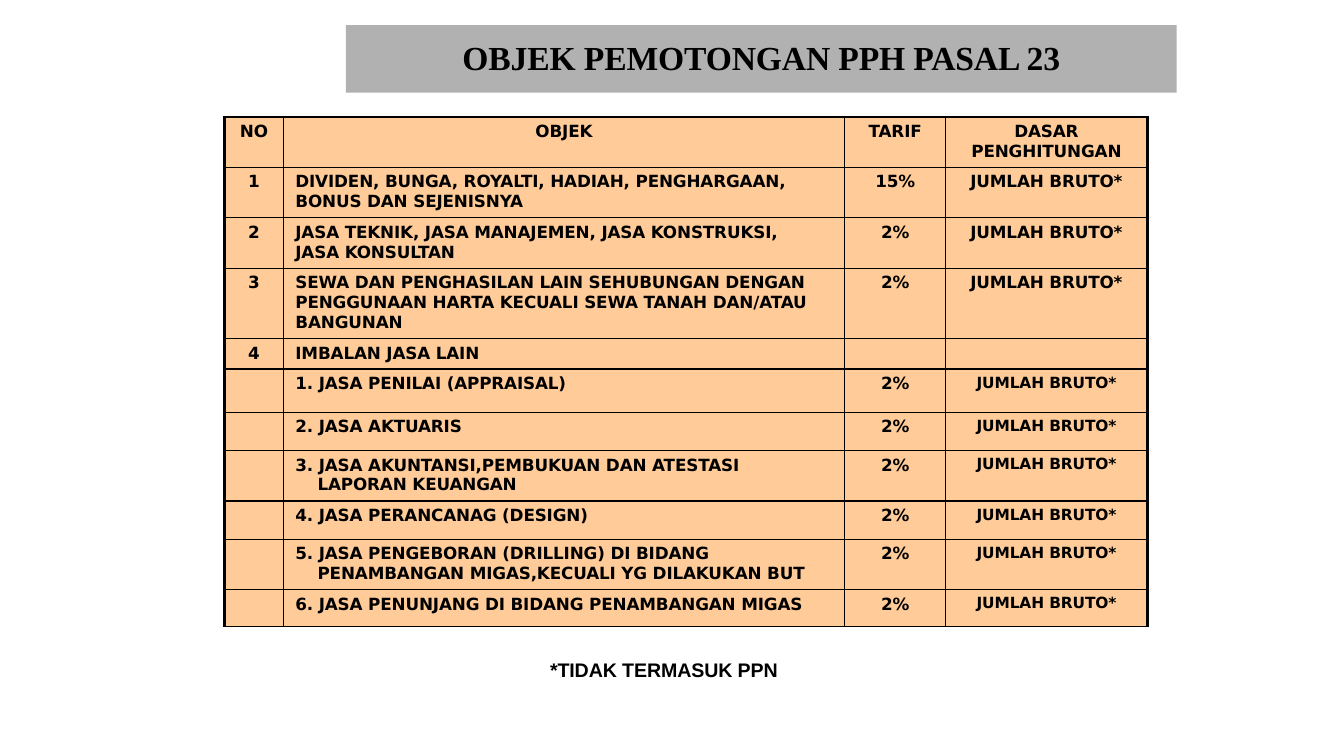
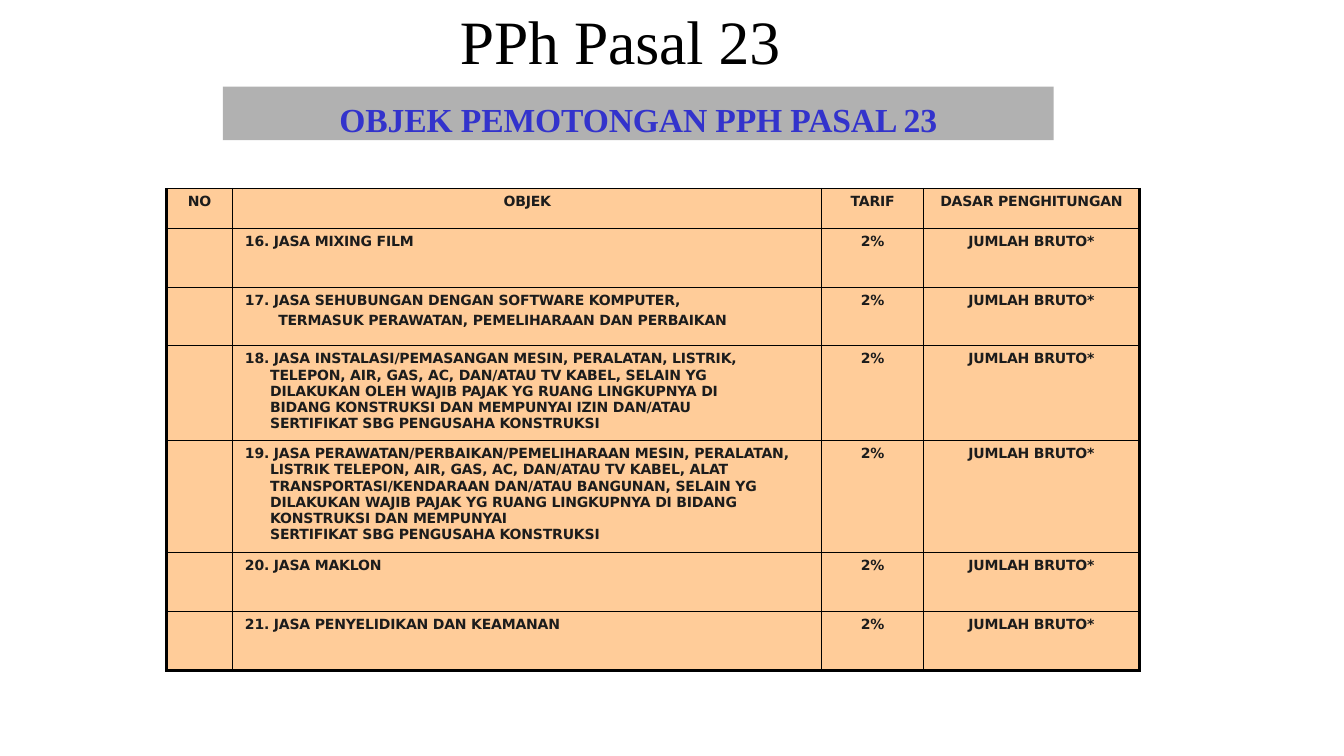
from lxml.etree import SubElement
from pptx import Presentation
from pptx.dml.color import RGBColor
from pptx.enum.shapes import MSO_SHAPE
from pptx.enum.text import MSO_ANCHOR, MSO_AUTO_SIZE, PP_ALIGN
from pptx.oxml.ns import qn
from pptx.util import Inches, Pt

BLACK = RGBColor(0x00, 0x00, 0x00)
INK = RGBColor(0x1C, 0x1C, 0x1C)
BLUE = RGBColor(0x33, 0x33, 0xCC)
GREY = RGBColor(0xB1, 0xB1, 0xB1)
PEACH = RGBColor(0xFF, 0xCC, 0x99)

SERIF, SANS, TABLE_FONT = "Times New Roman", "Arial", "DejaVu Sans"
HEADING = "OBJEK PEMOTONGAN PPH PASAL 23"
BASIS = "JUMLAH BRUTO*"
BAND_WIDTH = 8.24
THICK, THIN = 2.25, 1
CELL_INDENT, CELL_TOP = 0.12, 0.05

# Each row: number, object, rate, height; line spacing where it is not single
GENERAL = {
    "at": (2.23, 1.16),
    "columns": (0.58, 5.57, 1, 2),
    "header": ("NO", "OBJEK", "TARIF", "DASAR\nPENGHITUNGAN"),
    "header_height": 0.5,
    "rows": [
        ("1", "DIVIDEN, BUNGA, ROYALTI, HADIAH, PENGHARGAAN,\nBONUS DAN SEJENISNYA", "15%", 0.5),
        ("2", "JASA TEKNIK, JASA MANAJEMEN, JASA KONSTRUKSI,\nJASA KONSULTAN", "2%", 0.5),
        ("3", "SEWA DAN PENGHASILAN LAIN SEHUBUNGAN DENGAN\n"
              "PENGGUNAAN HARTA KECUALI SEWA TANAH DAN/ATAU\nBANGUNAN", "2%", 0.7),
        ("4", "IMBALAN JASA LAIN", "", 0.3),
        ("", "1. JASA PENILAI (APPRAISAL)", "2%", 0.43),
        ("", "2. JASA AKTUARIS", "2%", 0.38),
        ("", "3. JASA AKUNTANSI,PEMBUKUAN DAN ATESTASI\nLAPORAN KEUANGAN", "2%", 0.5),
        ("", "4. JASA PERANCANAG (DESIGN)", "2%", 0.38),
        ("", "5. JASA PENGEBORAN (DRILLING) DI BIDANG\n"
             "PENAMBANGAN MIGAS,KECUALI YG DILAKUKAN BUT", "2%", 0.5),
        ("", "6. JASA PENUNJANG DI BIDANG PENAMBANGAN MIGAS", "2%", 0.37),
    ],
    "size": 12, "item_basis_size": 11, "color": BLACK, "hang": 0.22,
    "outer": {"L": THICK, "R": THICK, "T": THICK, "B": THIN},
}
SERVICES = {
    "at": (1.65, 1.87),
    "columns": (0.66, 5.84, 1.01, 2.14),
    "header": ("NO", "OBJEK", "TARIF", "DASAR PENGHITUNGAN"),
    "header_height": 0.4,
    "rows": [
        ("", "16. JASA MIXING FILM", "2%", 0.58),
        ("", "17. JASA SEHUBUNGAN DENGAN SOFTWARE KOMPUTER,\n"
             "TERMASUK PERAWATAN, PEMELIHARAAN DAN PERBAIKAN", "2%", 0.58, 1.2),
        ("", "18. JASA INSTALASI/PEMASANGAN MESIN, PERALATAN, LISTRIK,\n"
             "TELEPON, AIR, GAS, AC, DAN/ATAU TV KABEL, SELAIN YG\n"
             "DILAKUKAN OLEH WAJIB PAJAK YG RUANG LINGKUPNYA DI\n"
             "BIDANG KONSTRUKSI DAN MEMPUNYAI IZIN DAN/ATAU\n"
             "SERTIFIKAT SBG PENGUSAHA KONSTRUKSI", "2%", 0.94),
        ("", "19. JASA PERAWATAN/PERBAIKAN/PEMELIHARAAN MESIN, PERALATAN,\n"
             "LISTRIK TELEPON, AIR, GAS, AC, DAN/ATAU TV KABEL, ALAT\n"
             "TRANSPORTASI/KENDARAAN DAN/ATAU BANGUNAN, SELAIN YG\n"
             "DILAKUKAN WAJIB PAJAK YG RUANG LINGKUPNYA DI BIDANG\n"
             "KONSTRUKSI DAN MEMPUNYAI\n"
             "SERTIFIKAT SBG PENGUSAHA KONSTRUKSI", "2%", 1.11),
        ("", "20. JASA MAKLON", "2%", 0.59),
        ("", "21. JASA PENYELIDIKAN DAN KEAMANAN", "2%", 0.58),
    ],
    "size": 10, "item_basis_size": 10, "color": INK, "hang": 0.25,
    "outer": {"L": THICK, "R": THICK, "T": THIN, "B": THICK},
}


def write(p, text, font, size, color, bold=True, align=PP_ALIGN.CENTER):
    p.text = text
    p.alignment = align
    for r in p.runs:
        r.font.name, r.font.size, r.font.bold = font, Pt(size), bold
        r.font.color.rgb = color
        r._r.get_or_add_rPr().set("spc", "-10")
    if not text:
        SubElement(p._p, qn("a:endParaRPr"), sz=str(size * 100))


def write_box(sp, top, *args, **kwargs):
    """Write one line in a shape, `top` inches below its upper edge."""
    tf = sp.text_frame
    tf.word_wrap = False
    tf.auto_size = MSO_AUTO_SIZE.NONE
    tf.vertical_anchor = MSO_ANCHOR.TOP
    tf.margin_left = tf.margin_right = tf.margin_bottom = 0
    tf.margin_top = Inches(top)
    write(tf.paragraphs[0], *args, **kwargs)


def add_band(s, left, top, height):
    sp = s.shapes.add_shape(MSO_SHAPE.RECTANGLE, *map(Inches, (left, top, BAND_WIDTH, height)))
    sp.shadow.inherit = False
    sp.fill.solid()
    sp.fill.fore_color.rgb = GREY
    sp.line.fill.background()
    return sp


def set_title(s, text, box, size, bold):
    title = s.shapes.title
    title.left, title.top, title.width, title.height = map(Inches, box)
    write_box(title, 0.01, text, SERIF, size, BLACK, bold=bold)
    s.shapes._spTree.append(title._element)  # in front of the band


def set_borders(cell, widths):
    tcPr = cell._tc.get_or_add_tcPr()
    for side in "LRTB":
        ln = SubElement(tcPr, qn(f"a:ln{side}"), w=str(Pt(widths[side])))
        fill = SubElement(ln, qn("a:solidFill"))
        SubElement(fill, qn("a:srgbClr"), val=str(BLACK))


def add_rate_table(s, data):
    columns, rows = data["columns"], data["rows"]
    heights = [data["header_height"]] + [row[3] for row in rows]
    frame = s.shapes.add_table(len(heights), len(columns),
                               *map(Inches, (*data["at"], sum(columns), sum(heights))))
    table = frame.table
    table.first_row = table.horz_banding = False
    for column, width in zip(table.columns, columns):
        column.width = Inches(width)
    for table_row, height in zip(table.rows, heights):
        table_row.height = Inches(height)

    lines = [data["header"]] + [(no, item, rate, BASIS if rate else "")
                                for no, item, rate, *_ in rows]
    last_row, last_column = len(lines) - 1, len(columns) - 1
    for i, line in enumerate(lines):
        is_item = i > 0 and not line[0]
        for j, text in enumerate(line):
            cell = table.cell(i, j)
            on_edge = {"L": j == 0, "R": j == last_column, "T": i == 0, "B": i == last_row}
            set_borders(cell, {side: data["outer"][side] if edge else THIN
                               for side, edge in on_edge.items()})
            cell.fill.solid()
            cell.fill.fore_color.rgb = PEACH
            cell.margin_left = cell.margin_right = cell.margin_bottom = 0
            cell.margin_top = Inches(CELL_TOP)
            p = cell.text_frame.paragraphs[0]
            is_object = i > 0 and j == 1
            size = data["item_basis_size"] if is_item and j == last_column else data["size"]
            write(p, text, TABLE_FONT, size, data["color"],
                  align=PP_ALIGN.LEFT if is_object else PP_ALIGN.CENTER)
            if is_object:
                hang = data["hang"] if is_item else 0
                spacing = rows[i - 1][4:]
                if spacing:
                    p.line_spacing = spacing[0]
                    hang += 0.08
                    cell.margin_top = Inches(0.02)
                pPr = p._p.get_or_add_pPr()
                pPr.set("marL", str(Inches(CELL_INDENT + hang)))
                pPr.set("indent", str(Inches(-hang)))


def main():
    prs = Presentation()
    prs.slide_width, prs.slide_height = Inches(13.33), Inches(7.5)
    title_only = prs.slide_layouts[5]

    s = prs.slides.add_slide(title_only)
    add_band(s, 3.43, 0.25, 0.67)
    set_title(s, HEADING, (4.53, 0.36, 6.04, 0.42), 24, True)
    add_rate_table(s, GENERAL)
    note = s.shapes.add_textbox(*map(Inches, (5.43, 6.52, 2.31, 0.25)))
    write_box(note, 0.01, "*TIDAK TERMASUK PPN", SANS, 14, BLACK)

    s = prs.slides.add_slide(title_only)
    add_rate_table(s, SERVICES)
    set_title(s, "PPh Pasal 23", (4.54, 0.02, 3.22, 0.75), 44, False)
    band = add_band(s, 2.21, 0.86, 0.53)
    write_box(band, 0.12, HEADING, SERIF, 24, BLUE)

    prs.save("out.pptx")


if __name__ == "__main__":
    main()
